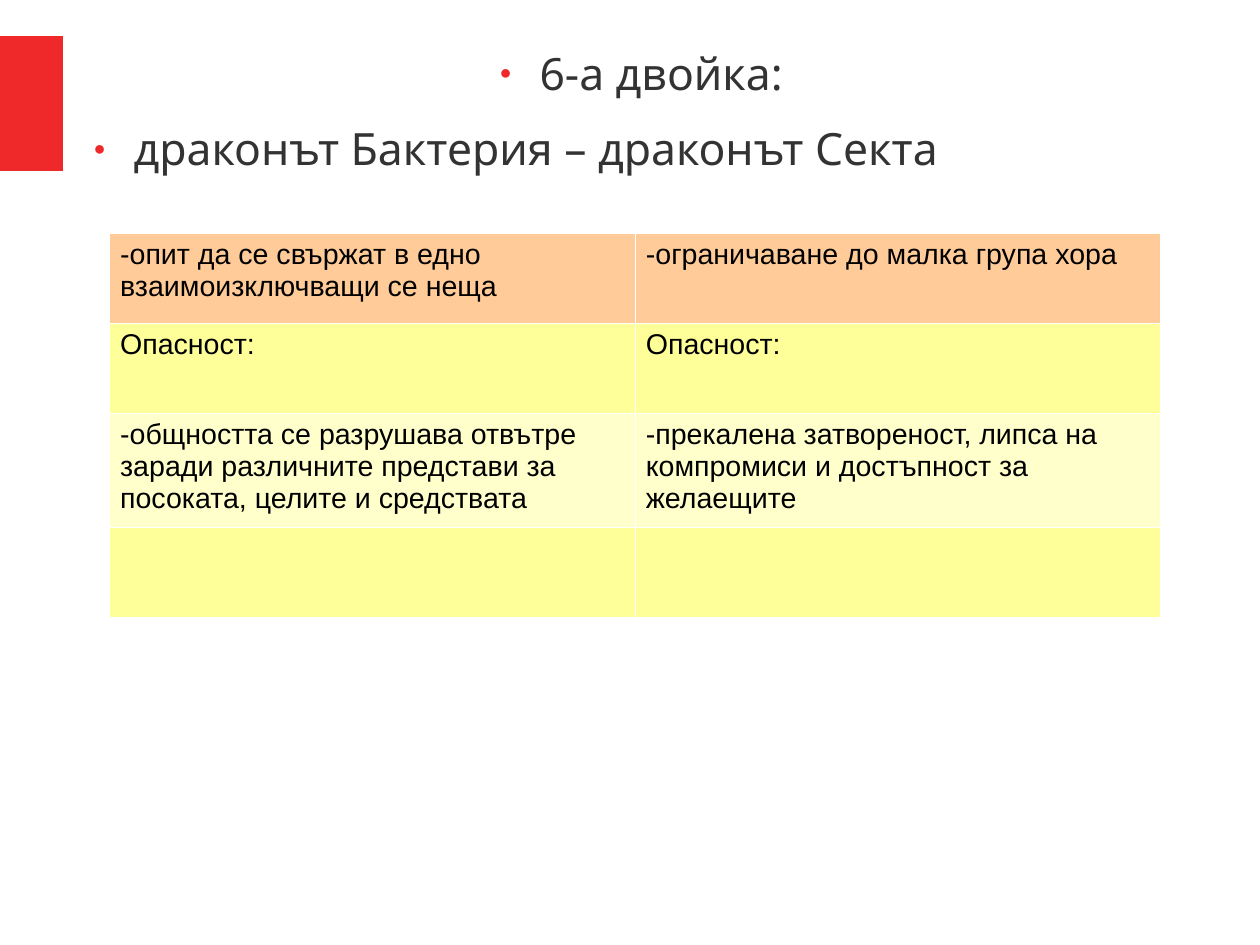
"""Builds the slide on the sixth pair of dragons."""
from lxml import etree
from pptx import Presentation
from pptx import util as u
from pptx.dml.color import RGBColor
from pptx.enum import shapes, text
from pptx.oxml.ns import qn

HEADINGS = [
    ("6-а двойка:", text.PP_ALIGN.CENTER),
    ("драконът Бактерия – драконът Секта", text.PP_ALIGN.LEFT),
]
ROWS = [
    ("header", "-опит да се свържат в едно взаимоизключващи се неща",
     "-ограничаване до малка група хора"),
    ("band", "Опасност:", "Опасност:"),
    ("plain", "-общността се разрушава отвътре заради различните представи за посоката, целите и средствата",
     "-прекалена затвореност, липса на компромиси и достъпност за желаещите"),
    ("band", "", ""),
]
THEME = {
    "accent": "EF2929", "border": "FFFFFF", "bullet_font": "Arial",
    "header": "FFCC99", "band": "FFFF99", "plain": "FFFFCC",
    "heading": {"name": "Noto Sans", "size": u.Pt(28), "color": "333333"},
    "cell": {"name": "Arial", "size": u.Pt(18), "color": "000000"},
}
SLIDE = (793.75, 595.25)
ACCENT_BOX = (0, 22.68, 39.6, 84.96)
HEADING_BOX = (50.4, 28.8, 698.4, 344.88)
TABLE_BOX = (68.6, 146.88, 662.4, 226.8)
BORDER_WIDTH = 0.06
NO_STYLE = "{2D5ABB26-0587-4C30-8999-92F81FD0307C}"


def pts(values):
    return [u.Pt(v) for v in values]


def assign(obj, values):
    for name, value in values.items():
        setattr(obj, name, value)


def margins(across, down):
    return {"margin_left": u.Pt(across), "margin_right": u.Pt(across),
            "margin_top": u.Pt(down), "margin_bottom": u.Pt(down)}


def add_run(p, words, style):
    r = p.add_run()
    r.text = words
    assign(r.font, {k: v for k, v in style.items() if k != "color"})
    r.font.color.rgb = RGBColor.from_string(style["color"])


def set_fill(obj, color):
    obj.fill.solid()
    obj.fill.fore_color.rgb = RGBColor.from_string(color)


def add_bullet(p):
    pPr = p._p.get_or_add_pPr()
    pPr.set("marL", str(u.Pt(33.84)))
    pPr.set("indent", str(u.Pt(-25.2)))
    clr = etree.SubElement(pPr, qn("a:buClr"))
    etree.SubElement(clr, qn("a:srgbClr"), val=THEME["accent"])
    etree.SubElement(pPr, qn("a:buSzPct"), val="45000")
    etree.SubElement(pPr, qn("a:buFont"), typeface=THEME["bullet_font"])
    etree.SubElement(pPr, qn("a:buChar"), char="●")


def add_borders(cell):
    tcPr = cell._tc.get_or_add_tcPr()
    for i, side in enumerate(("lnL", "lnR", "lnT", "lnB")):
        ln = etree.Element(qn(f"a:{side}"), w=str(u.Pt(BORDER_WIDTH)))
        fill = etree.SubElement(ln, qn("a:solidFill"))
        etree.SubElement(fill, qn("a:srgbClr"), val=THEME["border"])
        tcPr.insert(i, ln)


def add_accent(s):
    sp = s.shapes.add_shape(shapes.MSO_SHAPE.RECTANGLE, *pts(ACCENT_BOX))
    sp.shadow.inherit = False
    set_fill(sp, THEME["accent"])
    sp.line.fill.background()


def add_headings(s):
    tf = s.shapes.add_textbox(*pts(HEADING_BOX)).text_frame
    assign(tf, {"word_wrap": True, **margins(0, 0)})
    for i, (words, align) in enumerate(HEADINGS):
        p = tf.add_paragraph() if i else tf.paragraphs[0]
        assign(p, {"alignment": align, "space_after": u.Pt(14.1)})
        add_bullet(p)
        add_run(p, words, THEME["heading"])


def add_comparison(s):
    table = s.shapes.add_table(len(ROWS), 2, *pts(TABLE_BOX)).table
    assign(table, {"first_row": False, "horz_banding": False})
    table._tbl.tblPr.find(qn("a:tableStyleId")).text = NO_STYLE
    for i, (kind, *words) in enumerate(ROWS):
        for j, entry in enumerate(words):
            cell = table.cell(i, j)
            assign(cell, margins(7.09, 3.54))
            set_fill(cell, THEME[kind])
            add_borders(cell)
            p = cell.text_frame.paragraphs[0]
            assign(p, {"space_before": u.Pt(0), "space_after": u.Pt(0)})
            if entry:
                add_run(p, entry, THEME["cell"])


def main():
    prs = Presentation()
    prs.slide_width, prs.slide_height = pts(SLIDE)
    s = prs.slides.add_slide(prs.slide_layouts[6])
    add_accent(s)
    add_headings(s)
    add_comparison(s)
    prs.save("out.pptx")


if __name__ == "__main__":
    main()
